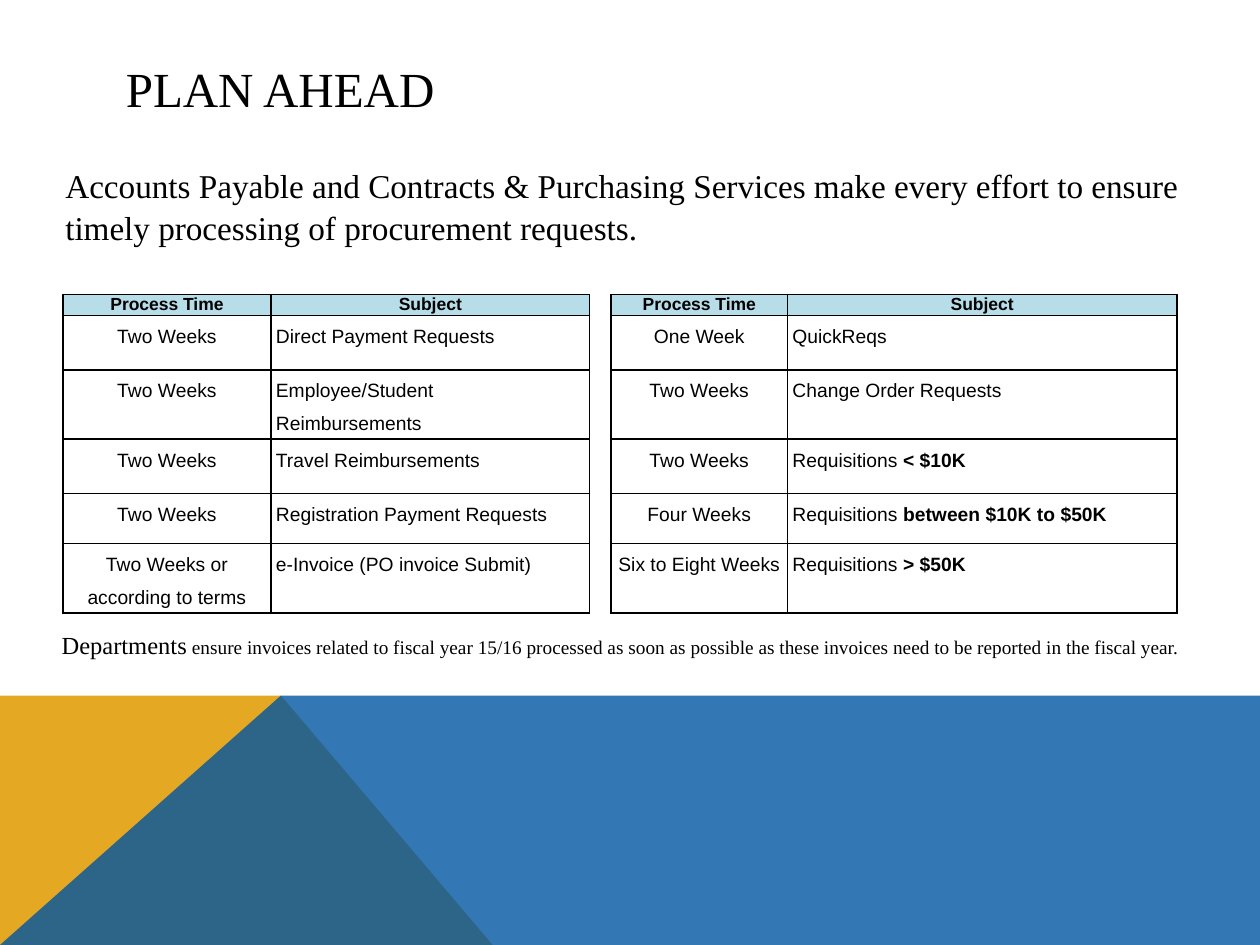
from dataclasses import dataclass
from lxml.etree import SubElement
from pptx import Presentation
from pptx.dml.color import RGBColor
from pptx.enum.text import MSO_ANCHOR, MSO_AUTO_SIZE, PP_ALIGN
from pptx.oxml.ns import qn
from pptx.util import Inches, Pt


@dataclass
class Theme:
    ink = RGBColor(0, 0, 0)
    gold = RGBColor(0xE5, 0xA8, 0x23)
    blue = RGBColor(0x00, 0x55, 0xA2)
    head = RGBColor(0xB6, 0xDD, 0xE8)
    serif = "Times New Roman"
    sans = "Arial"
    title = Pt(28)
    lead = Pt(19)
    note = Pt(14)
    cell = Pt(11)
    label = Pt(10)


def write(para, parts, face):
    for text, size, bold in parts:
        run = para.add_run()
        run.text = text
        run.font.size = size
        run.font.bold = bold
        run.font.name = face
        run.font.color.rgb = theme.ink


def edge(cell, sides):
    props = cell._tc.get_or_add_tcPr()
    for side in "LRTB":
        line = SubElement(props, qn("a:ln" + side), w=str(Pt(1)))
        if side in sides:
            fill = SubElement(line, qn("a:solidFill"))
            SubElement(fill, qn("a:srgbClr"), val=str(theme.ink))
        else:
            SubElement(line, qn("a:noFill"))


theme = Theme()
deck = Presentation()
deck.slide_width = Inches(10)
deck.slide_height = Inches(7.5)
slide = deck.slides.add_slide(deck.slide_layouts[6])

bands = [
    (theme.gold, 100, [(0, 7.5), (0, 5.52), (2.23, 5.52), (3.91, 7.5)]),
    (theme.blue, 80, [(0, 7.5), (2.23, 5.52), (10, 5.52), (10, 7.5)]),
]
for color, alpha, points in bands:
    spots = [(Inches(x), Inches(y)) for x, y in points]
    pen = slide.shapes.build_freeform(*spots[0])
    pen.add_line_segments(spots[1:], close=True)
    band = pen.convert_to_shape()
    band.shadow.inherit = False
    band.line.fill.background()
    band.fill.solid()
    band.fill.fore_color.rgb = color
    if alpha < 100:
        tint = band._element.spPr.find(qn("a:solidFill"))[0]
        SubElement(tint, qn("a:alpha"), val=str(alpha * 1000))

texts = [
    ((0.9, 0.4, 8.22, 0.6), MSO_ANCHOR.MIDDLE, True, 1,
     [("PLAN AHEAD", theme.title, False)]),
    ((0.42, 1.25, 9.25, 1.04), MSO_ANCHOR.TOP, True, 1.05,
     [("Accounts Payable and Contracts & Purchasing Services make every effort "
       "to ensure timely processing of procurement requests.", theme.lead, False)]),
    ((0.39, 4.95, 9.15, 0.34), MSO_ANCHOR.TOP, False, 1,
     [("Departments", theme.note, False),
      (" ensure invoices related to fiscal year 15/16 processed as soon as possible "
       "as these invoices need to be reported in the fiscal year.", theme.cell, False)]),
]
for place, anchor, wrap, space, parts in texts:
    frame = slide.shapes.add_textbox(*map(Inches, place)).text_frame
    frame.word_wrap = wrap
    frame.vertical_anchor = anchor
    if not wrap:
        frame.auto_size = MSO_AUTO_SIZE.SHAPE_TO_FIT_TEXT
    para = frame.paragraphs[0]
    para.line_spacing = space
    write(para, parts, theme.serif)

heads = ("Process Time", "Subject", "", "Process Time", "Subject")
rows = [
    ("Two Weeks", "Direct Payment Requests", "", "One Week", "QuickReqs"),
    ("Two Weeks", "Employee/Student Reimbursements", "", "Two Weeks", "Change Order Requests"),
    ("Two Weeks", "Travel Reimbursements", "", "Two Weeks", "Requisitions |< $10K"),
    ("Two Weeks", "Registration Payment Requests", "", "Four Weeks",
     "Requisitions |between $10K to $50K"),
    ("Two Weeks or according to terms", "e-Invoice (PO invoice Submit)", "",
     "Six to Eight Weeks", "Requisitions |> $50K"),
]
data = [("",) * 5, heads] + rows
widths = [1.65, 2.53, 0.17, 1.4, 2.8, 0.29]
heights = [0.13, 0.13, 0.43, 0.43, 0.43, 0.4, 0.43]
table = slide.shapes.add_table(
    len(heights), len(widths), Inches(0.5), Inches(2.17),
    Inches(sum(widths)), Inches(sum(heights))).table
for col, width in zip(table.columns, widths):
    col.width = Inches(width)
for row, height in zip(table.rows, heights):
    row.height = Inches(height)

for i, row in enumerate(data):
    for j in range(len(widths)):
        cell = table.cell(i, j)
        cell.margin_left = cell.margin_right = Inches(0.04)
        cell.margin_top = cell.margin_bottom = 0
        gap = j == 2
        if i == 0:
            edge(cell, "" if gap else "B")
        else:
            edge(cell, "LR" if gap else "LRTB")
        if i == 1 and not gap:
            cell.fill.solid()
            cell.fill.fore_color.rgb = theme.head
        else:
            cell.fill.background()
        para = cell.text_frame.paragraphs[0]
        text = row[j] if j < len(row) else ""
        if not text:
            SubElement(para._p, qn("a:endParaRPr"), sz=str(int(theme.label.pt * 100)))
            continue
        if i == 1 or j in (0, 3):
            para.alignment = PP_ALIGN.CENTER
        if i > 1:
            para.line_spacing = 1.5
        size = theme.label if i == 1 else theme.cell
        parts = [(t, size, i == 1 or k == 1) for k, t in enumerate(text.split("|"))]
        write(para, parts, theme.sans)
    pairs = [(0, 1), (3, 4)] if i == 0 else [(4, 5)]
    for first, last in pairs:
        table.cell(i, first).merge(table.cell(i, last))

deck.save("out.pptx")
